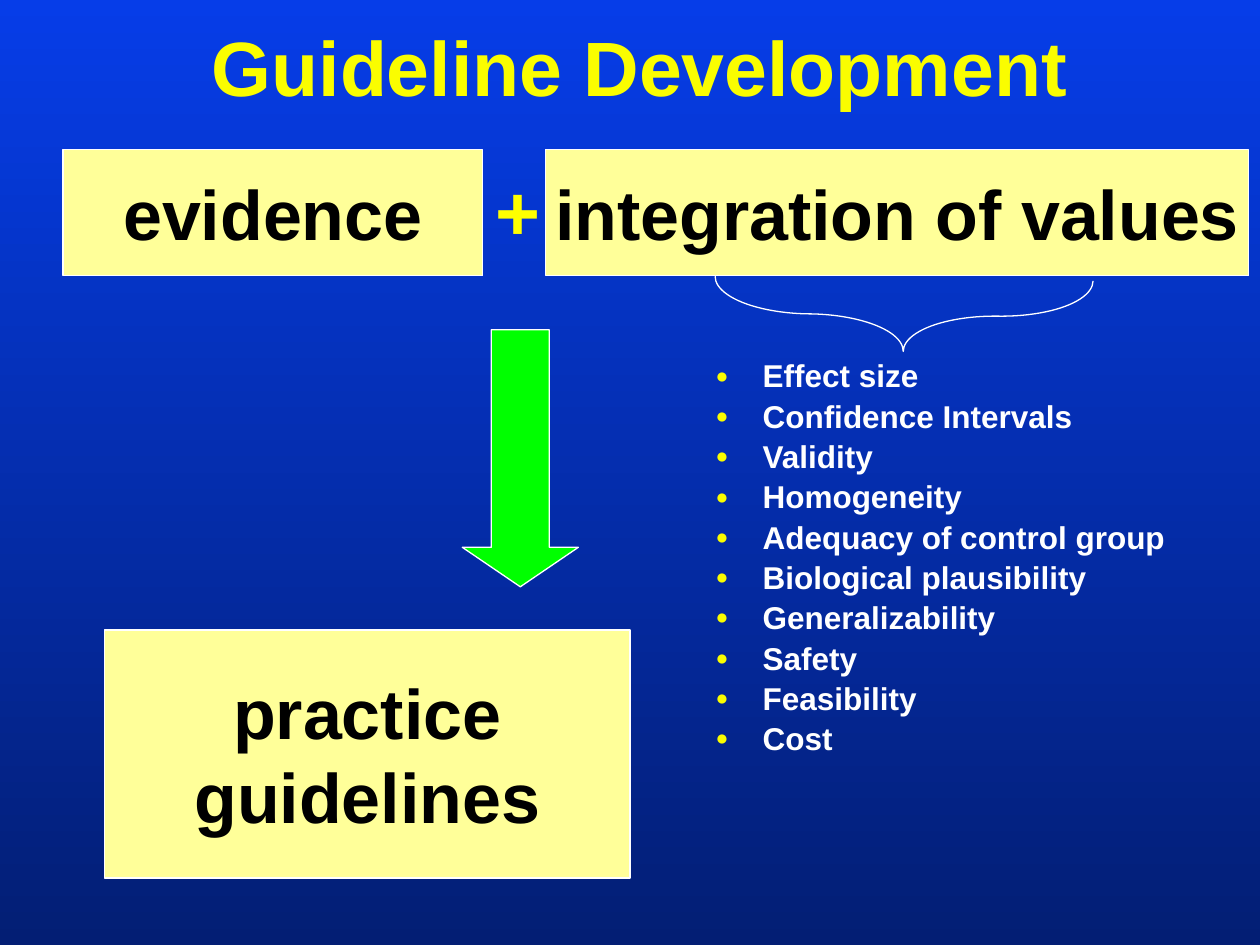
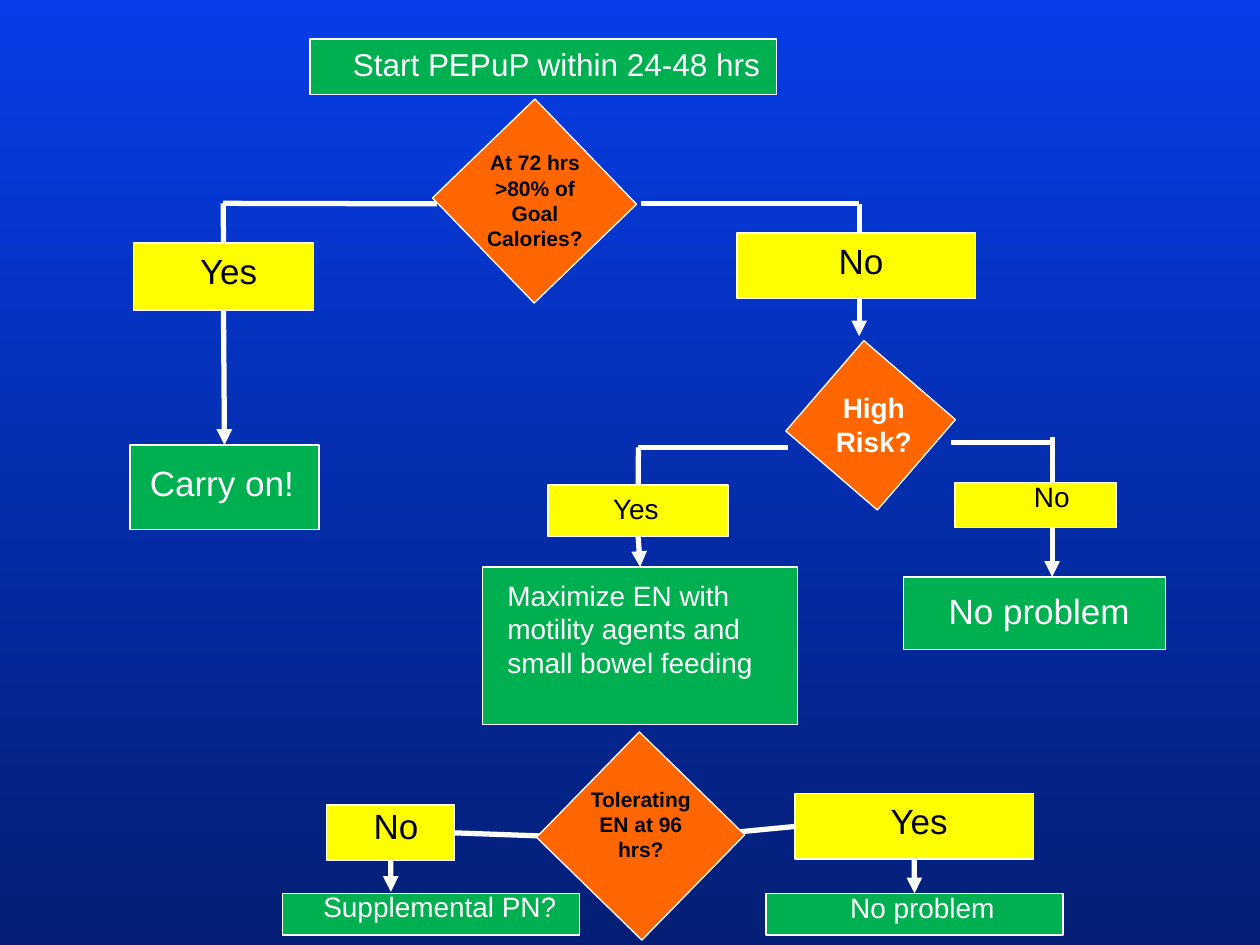
import dataclasses

import lxml.etree
import pptx
import pptx.dml.color
import pptx.enum.shapes
import pptx.enum.text
import pptx.oxml.ns
import pptx.util

Cm = pptx.util.Cm
SHAPE = pptx.enum.shapes.MSO_SHAPE
ALIGN = pptx.enum.text.PP_ALIGN
ANCHOR = pptx.enum.text.MSO_ANCHOR
qn = pptx.oxml.ns.qn


@dataclasses.dataclass(frozen=True)
class Theme:
    """Colours, font and type sizes of the deck."""
    font: str = "Arial"
    sky: str = "063DE8"
    deep: str = "031E74"
    gold: str = "FAFD00"
    cream: str = "FFFF99"
    yellow: str = "FFFF00"
    green: str = "00B050"
    lime: str = "00FF00"
    orange: str = "FF6600"
    white: str = "FFFFFF"
    black: str = "000000"
    title: int = 44
    head: int = 40
    large: int = 20
    list: int = 18
    small: int = 16
    tiny: int = 12
    thin: float = 0.75
    thick: float = 3


THEME = Theme()


@dataclasses.dataclass(frozen=True)
class Box:
    """A rectangle in centimetres."""
    x: float
    y: float
    w: float
    h: float

    def sub(self, x, y, w, h):
        """Return a box placed relative to this one."""
        return Box(self.x + x, self.y + y, w, h)

    def point(self, x, y):
        """Return a point placed relative to this box."""
        return self.x + x, self.y + y

    def dims(self):
        """Return left, top, width and height as lengths."""
        return Cm(self.x), Cm(self.y), Cm(self.w), Cm(self.h)


def rgb(code):
    """Return the colour for a hex code."""
    return pptx.dml.color.RGBColor.from_string(code)


def write(frame, text, size, color, bold=False, align=ALIGN.CENTER):
    """Put text in a frame and format all of its runs."""
    frame.text = text
    for para in frame.paragraphs:
        para.alignment = align
        for run in para.runs:
            run.font.name = THEME.font
            run.font.size = pptx.util.Pt(size)
            run.font.bold = bold
            run.font.color.rgb = rgb(color)


def label(slide, box, text, size, color, bold=False, align=ALIGN.CENTER):
    """Add a wrapping text box."""
    frame = slide.shapes.add_textbox(*box.dims()).text_frame
    frame.word_wrap = True
    write(frame, text, size, color, bold, align)


def block(slide, box, fill=None, kind=SHAPE.RECTANGLE, turn=0, adjust=()):
    """Add a thinly outlined preset shape."""
    shape = slide.shapes.add_shape(kind, *box.dims())
    shape.shadow.inherit = False
    shape.rotation = turn
    for index, value in enumerate(adjust):
        shape.adjustments[index] = value
    if fill:
        shape.fill.solid()
        shape.fill.fore_color.rgb = rgb(fill)
    else:
        shape.fill.background()
    shape.line.color.rgb = rgb(THEME.white)
    shape.line.width = pptx.util.Pt(THEME.thin)
    return shape


def card(slide, box, text):
    """Add a cream process box with a large heading."""
    frame = block(slide, box, THEME.cream, SHAPE.FLOWCHART_PROCESS).text_frame
    frame.word_wrap = False
    frame.vertical_anchor = ANCHOR.MIDDLE
    write(frame, text, THEME.head, THEME.black, True)


def place(holder, box):
    """Move a placeholder to a box."""
    holder.left, holder.top, holder.width, holder.height = box.dims()


def step(slide, box, inner, text, size, align=ALIGN.CENTER):
    """Add a green action box with its label."""
    shape = block(slide, box, THEME.green)
    label(slide, box.sub(*inner), text, size, THEME.white, align=align)
    return shape


def reply(slide, box, inner, text, size=THEME.large):
    """Add a yellow answer box with its label."""
    shape = block(slide, box, THEME.yellow)
    label(slide, box.sub(*inner), text, size, THEME.black)
    return shape


def query(slide, box, turn, inner, text, size=THEME.tiny, color=THEME.black):
    """Add a turned orange square with a level question."""
    block(slide, box, THEME.orange, turn=turn)
    label(slide, box.sub(*inner), text, size, color, True)


def link(slide, begin, end, arrow=False):
    """Draw a line between points or (shape, site) pairs."""
    line = slide.shapes.add_connector(
        pptx.enum.shapes.MSO_CONNECTOR.STRAIGHT, 0, 0, 0, 0)
    if hasattr(begin[0], "shape_id"):
        line.begin_connect(*begin)
    else:
        line.begin_x, line.begin_y = map(Cm, begin)
    if hasattr(end[0], "shape_id"):
        line.end_connect(*end)
    else:
        line.end_x, line.end_y = map(Cm, end)
    line.line.color.rgb = rgb(THEME.white)
    line.line.width = pptx.util.Pt(THEME.thick)
    props = line.element.find(qn("p:spPr"))
    if arrow:
        lxml.etree.SubElement(
            props.find(qn("a:ln")), qn("a:tailEnd"), type="triangle")
    lxml.etree.SubElement(props, qn("a:effectLst"))


def bullet(para):
    """Give a paragraph a gold dot and a hanging indent."""
    para.line_spacing = 0.9
    props = para._p.get_or_add_pPr()
    props.set("marL", str(Cm(0.95)))
    props.set("indent", str(-Cm(0.95)))
    color = lxml.etree.SubElement(props, qn("a:buClr"))
    lxml.etree.SubElement(color, qn("a:srgbClr"), val=THEME.gold)
    lxml.etree.SubElement(props, qn("a:buSzPct"), val="68000")
    lxml.etree.SubElement(props, qn("a:buFont"), typeface=THEME.font)
    lxml.etree.SubElement(props, qn("a:buChar"), char="●")


def heading(slide, box, text):
    """Fill the title placeholder."""
    title = slide.shapes.title
    place(title, box)
    title.text_frame.vertical_anchor = ANCHOR.MIDDLE
    write(title.text_frame, text, THEME.title, THEME.gold, True)


def formula(slide, box):
    """Show evidence plus values leading to guidelines."""
    card(slide, box.sub(0, 0, 8.46, 2.54), "evidence")
    card(slide, box.sub(9.73, 0, 14.17, 2.54), "integration of values")
    label(slide, box.sub(8.46, 0.15, 1.7, 2.13), "+", THEME.title,
          THEME.yellow, True, ALIGN.LEFT)
    block(slide, box.sub(8.05, 3.63, 2.34, 5.18), THEME.lime,
          SHAPE.DOWN_ARROW, adjust=(0.5, 0.34))
    card(slide, box.sub(0.84, 9.68, 10.59, 5), "practice\nguidelines")


def values(slide, box):
    """List the values under a brace."""
    block(slide, box.sub(3.31, -4.6, 1.47, 7.62), kind=SHAPE.RIGHT_BRACE,
          turn=90.7, adjust=(1.29, 0.5))
    body = slide.placeholders[1]
    place(body, box)
    names = ("Effect size", "Confidence Intervals", "Validity", "Homogeneity",
             "Adequacy of control group", "Biological plausibility",
             "Generalizability", "Safety", "Feasibility", "Cost")
    write(body.text_frame, "\n".join(names), THEME.list, THEME.white, True,
          ALIGN.LEFT)
    body.text_frame.auto_size = pptx.enum.text.MSO_AUTO_SIZE.NONE
    for para in body.text_frame.paragraphs:
        bullet(para)


def intake(slide, box):
    """Draw the start and the calorie check."""
    left, right = box.point(2, 3.6), box.point(14.82, 3.61)
    link(slide, box.point(6.31, 3.61), left)
    link(slide, box.point(10.43, 3.61), right)
    link(slide, right, box.point(14.82, 6.28), True)
    step(slide, box.sub(3.75, 0.29, 9.4, 1.12), (-0.43, 0, 10.8, 1.02),
         "Start PEPuP within 24-48 hrs", THEME.list)
    yes = reply(slide, box.sub(0.19, 4.4, 3.63, 1.35),
                (0, 0, 3.84, 1.12), "Yes")
    reply(slide, box.sub(12.36, 4.2, 4.8, 1.32), (0.2, 0, 4.6, 1.12), "No")
    carry = step(slide, box.sub(0.12, 8.47, 3.81, 1.7),
                 (0.15, 0.2, 3.58, 1.12), "Carry on!", THEME.large, ALIGN.LEFT)
    link(slide, left, (yes, 0))
    link(slide, (yes, 2), (carry, 0), True)
    query(slide, box.sub(6.8, 2.12, 2.95, 2.87), 46, (0.15, 0.28, 2.67, 2.31),
          "At 72 hrs >80% of Goal Calories?")


def risk(slide, box):
    """Draw the risk check and its two outcomes."""
    left = box.point(3.37, 2.02)
    link(slide, box.point(6.38, 2.02), left)
    link(slide, box.point(9.68, 1.92), box.point(11.71, 1.92))
    link(slide, box.point(11.71, 1.81), box.point(11.71, 4.63), True)
    yes = reply(slide, box.sub(1.55, 2.78, 3.63, 1.04),
                (0.64, 0, 2.26, 0.94), "Yes", THEME.small)
    reply(slide, box.sub(9.75, 2.73, 3.25, 0.91), (0, -0.18, 3.91, 0.94),
          "No", THEME.small)
    feed = step(slide, box.sub(0.23, 4.43, 6.35, 3.18),
                (0.25, 0.1, 6.12, 2.31),
                "Maximize EN with motility agents and small bowel feeding",
                THEME.small, ALIGN.LEFT)
    step(slide, box.sub(8.71, 4.63, 5.28, 1.47), (0.2, 0.13, 5.08, 1.12),
         "No problem", THEME.large)
    link(slide, left, (yes, 0))
    link(slide, (yes, 2), (feed, 0), True)
    query(slide, box.sub(6.83, 0.37, 2.44, 2.41), 40.8,
          (0.03, 0.38, 2.51, 1.63), "High Risk?", THEME.small, THEME.white)


def review(slide, box):
    """Draw the tolerance check and its two outcomes."""
    no = reply(slide, box.sub(1.08, 1.23, 2.59, 1.12),
               (0.58, -0.13, 1.65, 1.12), "No")
    yes = reply(slide, box.sub(10.53, 1, 4.8, 1.32), (0.2, 0, 4.6, 1.12), "Yes")
    step(slide, box.sub(0.19, 3.01, 5.99, 0.84), (0.58, -0.2, 5.77, 0.94),
         "Supplemental PN?", THEME.small, ALIGN.LEFT)
    fine = step(slide, box.sub(9.94, 3.01, 5.99, 0.84),
                (1.45, -0.18, 5.77, 0.94), "No problem", THEME.small,
                ALIGN.LEFT)
    link(slide, box.point(5.93, 1.87), (no, 3))
    link(slide, box.point(9.18, 1.79), (yes, 1))
    link(slide, (no, 2), box.point(2.38, 2.98), True)
    link(slide, (yes, 2), (fine, 0), True)
    query(slide, box.sub(5.93, 0.37, 2.97, 2.97), 44.3,
          (0.08, 0.36, 2.82, 1.8), "Tolerating EN at 96 hrs?")


def backdrop(master):
    """Give the master a vertical blue gradient."""
    fill = master.background.fill
    fill.gradient()
    fill.gradient_angle = 270
    for stop, color in zip(fill.gradient_stops, (THEME.sky, THEME.deep)):
        stop.color.rgb = rgb(color)


def main():
    """Build and save the deck."""
    deck = pptx.Presentation()
    deck.slide_width, deck.slide_height = Cm(25.4), Cm(19.05)
    backdrop(deck.slide_master)
    slide = deck.slides.add_slide(deck.slide_layouts[1])
    heading(slide, Box(2.11, 0.2, 21.59, 2.26), "Guideline Development")
    formula(slide, Box(1.27, 3.02, 23.9, 14.68))
    values(slide, Box(14.17, 7.14, 11.23, 8.59))
    slide = deck.slides.add_slide(deck.slide_layouts[6])
    intake(slide, Box(2.5, 0.5, 17.2, 10.2))
    risk(slide, Box(9.5, 7, 14, 7.65))
    review(slide, Box(5.5, 15, 16, 3.9))
    deck.save("out.pptx")


if __name__ == "__main__":
    main()
